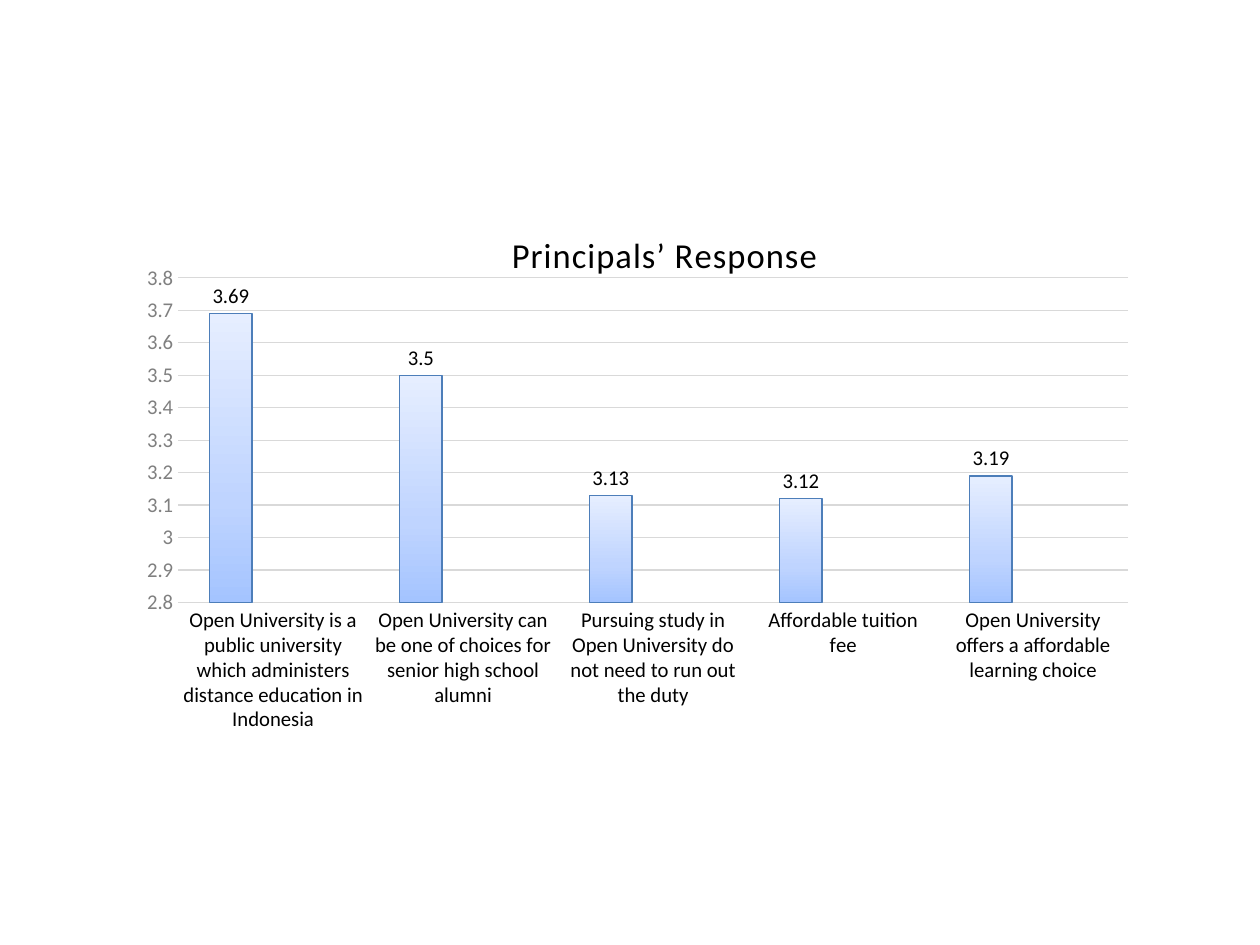
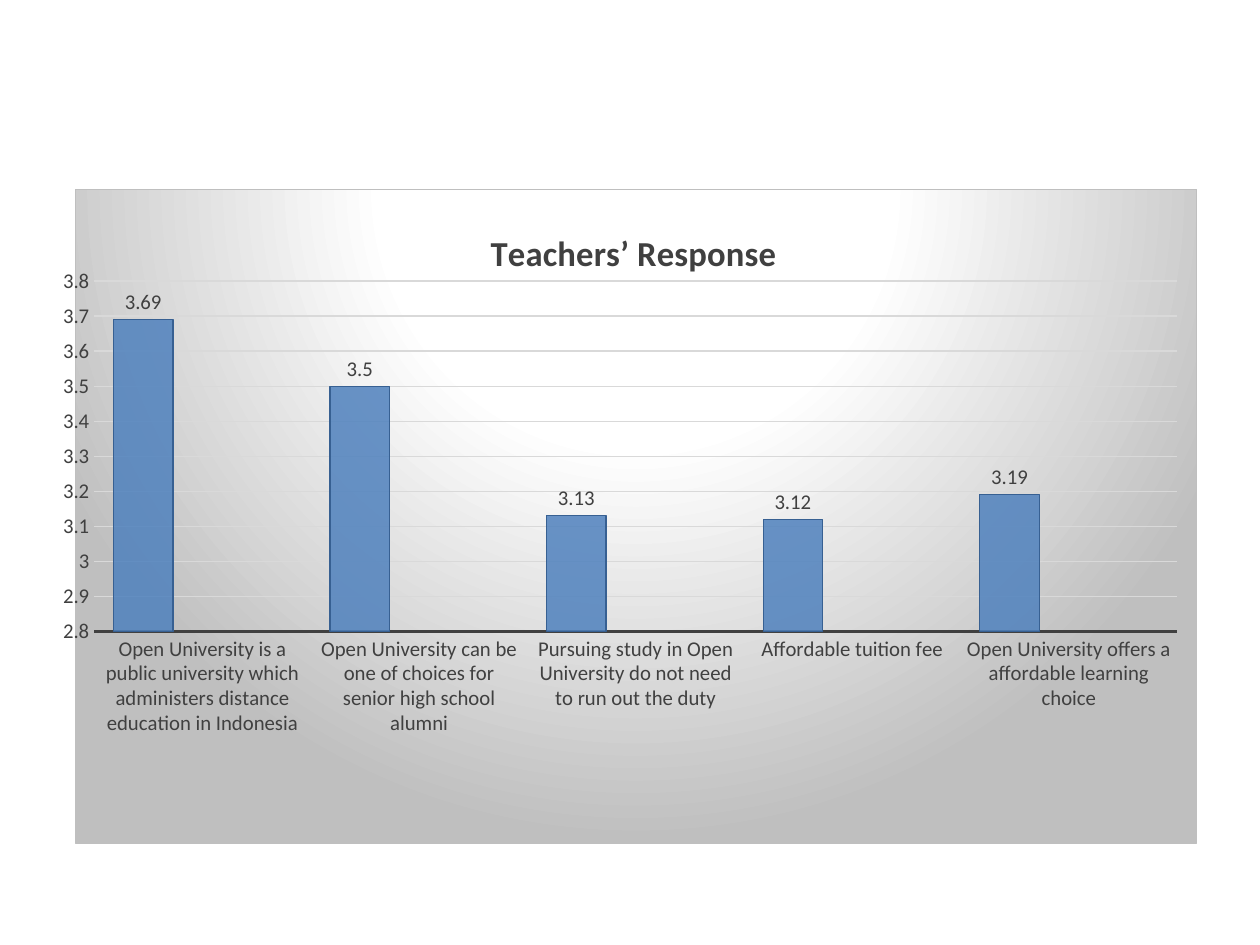
import pptx
import pptx.chart.data
import pptx.dml.color
import pptx.enum.chart
import pptx.oxml
import pptx.oxml.ns
import pptx.util

# Content
CATEGORIES = [
    "Open University is a public university which administers distance education in Indonesia",
    "Open University can be one of choices for senior high school alumni",
    "Pursuing study in Open University do not need to run out the duty",
    "Affordable tuition fee",
    "Open University offers a affordable learning choice",
]
SERIES = [
    ("Series 1", [3.69, 3.5, 3.13, 3.12, 3.19]),
    ("Series 2", [None] * 5),
    ("Series 3", [None] * 5),
]

# Theme: sizes in points, places in px or as shares of the chart
THEME = dict(font="Calibri", base_size=10, label_size=12, title_size=20,
             grid="D9D9D9", thin=0.75, plot=(0.017, 0.14, 0.966, 0.536))
FADE_STOPS = (0, 35, 100)
EMU_PER_PX = 914400 / 126

SLIDES = [
    dict(title="Principals’ Response", box=(147, 193, 998, 606),
         title_at=(0.35, 0.05), title_color="000000", bold=False, spacing=50,
         label_color="000000", value_color="808080", baseline=None, gap=150,
         bars=[(("A4C4FF", "BFD4FF", "E6EEFF"), "4D7EB9"),
               (("FFA6A5", "FFC0BF", "FFE7E7"), "BC4E4B"),
               (("DAFDA7", "E4FCC2", "F5FFE7"), "98B757")],
         backdrop=None),
    dict(title="Teachers’ Response", box=(63, 189, 1134, 655),
         title_at=(0.365, 0.05), title_color="404040", bold=True, spacing=0,
         label_color="404040", value_color="404040", baseline="404040", gap=65,
         bars=[("4F81BD", "376092"), ("C0504D", "953735"), ("9BBB59", "77933C")],
         backdrop=dict(stops=[(0, "FFFFFF"), (39, "FFFFFF"), (100, "BFBFBF")],
                       border="BFBFBF")),
]


def px(n):
    return pptx.util.Emu(round(n * EMU_PER_PX))


def rgb(code):
    return pptx.dml.color.RGBColor.from_string(code)


def xml(text):
    """Parse a fragment whose root tag has no namespace declarations yet."""
    head, tail = text.split(">", 1)
    slash = "/" if head.endswith("/") else ""
    names = pptx.oxml.ns.nsdecls("a", "c")
    return pptx.oxml.parse_xml(f"{head.rstrip('/')} {names}{slash}>{tail}")


def style_font(font, size, color):
    font.name = THEME["font"]
    font.size = pptx.util.Pt(size)
    font.color.rgb = rgb(color)


def style_line(line, color, width):
    line.color.rgb = rgb(color)
    line.width = pptx.util.Pt(width)


def gradient(stops, direction):
    gs = "".join(f'<a:gs pos="{pos * 1000}"><a:srgbClr val="{c}"/></a:gs>' for pos, c in stops)
    return xml(f'<a:gradFill rotWithShape="1"><a:gsLst>{gs}</a:gsLst>{direction}</a:gradFill>')


def bar_fill(color):
    if isinstance(color, tuple):
        return gradient(zip(FADE_STOPS, color), '<a:lin ang="16200000" scaled="0"/>')
    return xml(f'<a:solidFill><a:srgbClr val="{color}"><a:alpha val="85000"/>'
               '</a:srgbClr></a:solidFill>')


def place(parent, index, x, y, w=None, h=None):
    """Give a chart part a manual layout."""
    for old in parent.findall(pptx.oxml.ns.qn("c:layout")):
        parent.remove(old)
    target = '<c:layoutTarget val="inner"/>' if w else ""
    modes = '<c:xMode val="edge"/><c:yMode val="edge"/>'
    values = "".join(f'<c:{k} val="{v}"/>' for k, v in zip("xywh", (x, y, w, h)) if v)
    parent.insert(index, xml(f"<c:layout><c:manualLayout>{target}{modes}{values}"
                             "</c:manualLayout></c:layout>"))


def add_title(chart, look):
    tf = chart.chart_title.text_frame
    tf.text = look["title"]
    r = tf.paragraphs[0].runs[0]
    style_font(r.font, THEME["title_size"], look["title_color"])
    r.font.bold = look["bold"]
    r.font._element.set("spc", str(look["spacing"]))
    chart.chart_title.include_in_layout = False
    place(chart.chart_title._element, 1, *look["title_at"])


def style_axes(chart, look):
    cat, val = chart.category_axis, chart.value_axis
    for axis, color in ((cat, look["label_color"]), (val, look["value_color"])):
        axis.major_tick_mark = pptx.enum.chart.XL_TICK_MARK.NONE
        style_font(axis.tick_labels.font, THEME["label_size"], color)
        axis.format.line.fill.background()
    if look["baseline"]:
        style_line(cat.format.line, look["baseline"], 1.5)
    val.minimum_scale, val.maximum_scale, val.major_unit = 2.8, 3.8, 0.1
    style_line(val.major_gridlines.format.line, THEME["grid"], THEME["thin"])


def style_bars(chart, look):
    plot = chart.plots[0]
    plot.gap_width, plot.overlap, plot.vary_by_categories = look["gap"], 0, False
    for series, (fill, edge) in zip(plot.series, look["bars"]):
        series._element.get_or_add_spPr().insert(0, bar_fill(fill))
        style_line(series.format.line, edge, THEME["thin"])
        labels = series.data_labels
        labels.show_value = True
        labels.position = pptx.enum.chart.XL_LABEL_POSITION.OUTSIDE_END
        style_font(labels.font, THEME["label_size"], look["label_color"])


def add_backdrop(chart, backdrop):
    """Fill the chart area, or leave it clear."""
    sp = xml("<c:spPr><a:noFill/><a:ln><a:noFill/></a:ln></c:spPr>")
    if backdrop:
        sp = xml(f'<c:spPr><a:ln w="{pptx.util.Pt(THEME["thin"])}"><a:solidFill>'
                 f'<a:srgbClr val="{backdrop["border"]}"/></a:solidFill></a:ln></c:spPr>')
        sp.insert(0, gradient(backdrop["stops"],
                              '<a:path path="circle"><a:fillToRect l="50000" t="-80000" '
                              'r="50000" b="180000"/></a:path>'))
    chart._chartSpace.find(pptx.oxml.ns.qn("c:chart")).addnext(sp)


def add_response_slide(prs, look):
    data = pptx.chart.data.CategoryChartData()
    data.categories = CATEGORIES
    for name, values in SERIES:
        data.add_series(name, values)
    slide = prs.slides.add_slide(prs.slide_layouts[6])
    chart = slide.shapes.add_chart(pptx.enum.chart.XL_CHART_TYPE.COLUMN_CLUSTERED,
                                   *map(px, look["box"]), data).chart
    chart.has_legend = False
    style_font(chart.font, THEME["base_size"], "000000")
    add_title(chart, look)
    style_axes(chart, look)
    style_bars(chart, look)
    place(chart._chartSpace.chart.plotArea, 0, *THEME["plot"])
    add_backdrop(chart, look["backdrop"])


def main():
    prs = pptx.Presentation()
    prs.slide_width, prs.slide_height = px(1260), px(945)
    for look in SLIDES:
        add_response_slide(prs, look)
    prs.save("out.pptx")


if __name__ == "__main__":
    main()
